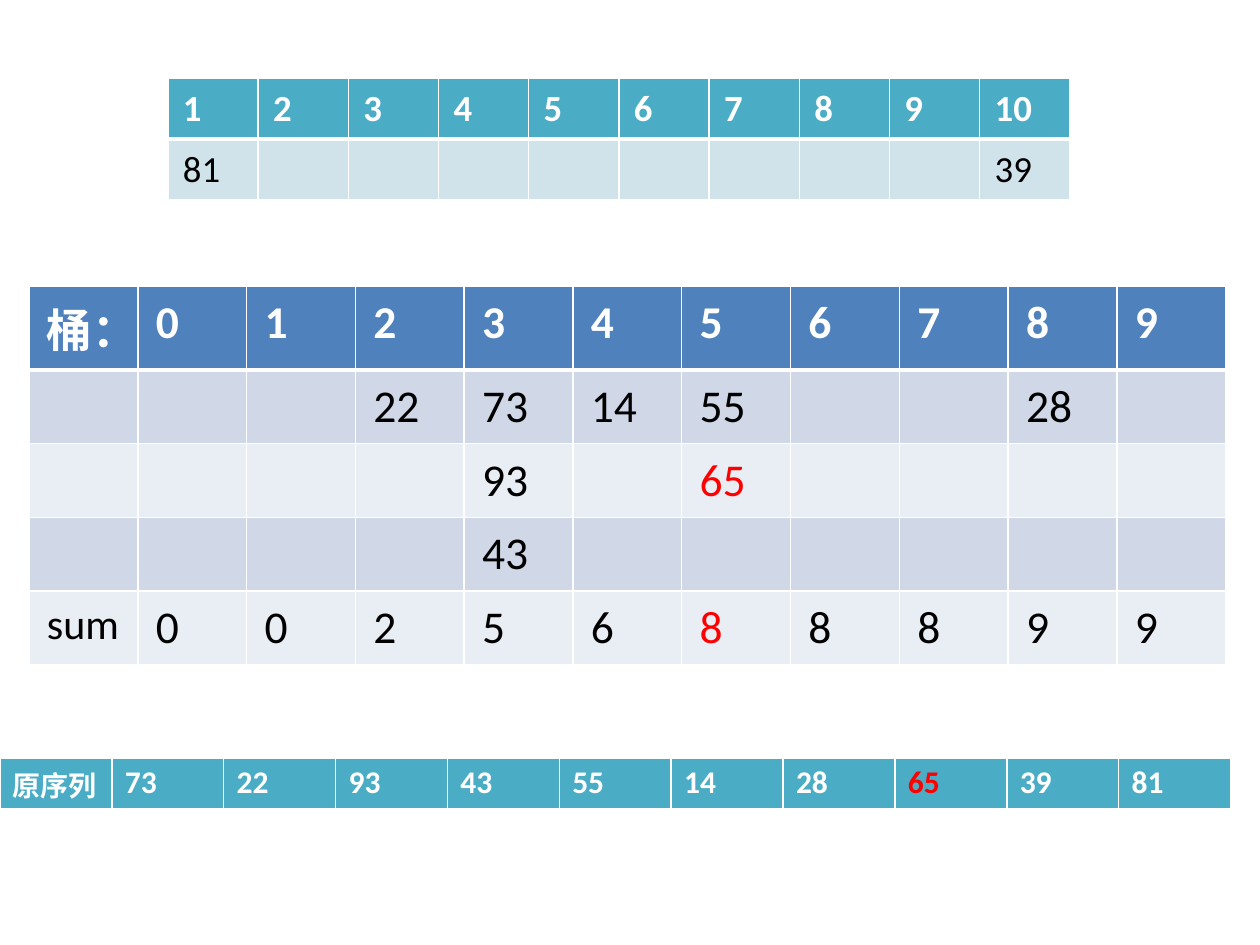
from lxml import etree
from pptx import Presentation
from pptx.dml.color import RGBColor
from pptx.oxml.ns import qn
from pptx.util import Emu, Pt

PX = 914400 / 126
BLANK_LAYOUT = 6
WHITE, BLACK, RED = "FFFFFF", "000000", "FF0000"
BLUE, TEAL = "4F81BD", "4BACC6"
BLUE_BANDS, TEAL_BANDS = ("D0D8E8", "E9EDF4"), ("D0E3EA",)


def px(length):
    return Emu(round(length * PX))


def color(value):
    return RGBColor.from_string(value)


class SlideBuilder:
    """Holds the shared style and the current slide."""

    font_name = "Calibri"
    border_color = WHITE

    def __init__(self, slide):
        self.slide = slide

    def table(self, box, rows, size, header_fill, bands=(), margins=(13, 6),
              red_cells=(), label_sizes=None):
        """Add an even grid: a bold header row, then banded body rows."""
        label_sizes = label_sizes or {}
        left, top, width, height = map(px, box)
        shape = self.slide.shapes.add_table(
            len(rows), len(rows[0]), left, top, width, height)
        table = shape.table
        for column in table.columns:
            column.width = Emu(width // len(rows[0]))
        for row in table.rows:
            row.height = Emu(height // len(rows))

        for i, values in enumerate(rows):
            header = i == 0
            fill = header_fill if header else bands[(i - 1) % len(bands)]
            for j, value in enumerate(values):
                cell = table.cell(i, j)
                text_color = WHITE if header else BLACK
                if (i, j) in red_cells:
                    text_color = RED
                self.cell(cell, fill, margins)
                self.borders(cell, top=3 if i == 1 else 1,
                             bottom=3 if header else 1)
                if value:
                    self.text(cell, value, size=Pt(label_sizes.get((i, j), size)),
                              bold=header, text_color=text_color)

    def cell(self, cell, fill, margins):
        horizontal, vertical = map(px, margins)
        settings = {"margin_left": horizontal, "margin_right": horizontal,
                    "margin_top": vertical, "margin_bottom": vertical}
        for name, value in settings.items():
            setattr(cell, name, value)
        cell.fill.solid()
        cell.fill.fore_color.rgb = color(fill)

    def text(self, cell, value, text_color, **settings):
        run = cell.text_frame.paragraphs[0].add_run()
        run.text = value
        for name, setting in {"name": self.font_name, **settings}.items():
            setattr(run.font, name, setting)
        run.font.color.rgb = color(text_color)

    def borders(self, cell, top, bottom):
        """Border lines come before the fill in the cell properties."""
        properties = cell._tc.get_or_add_tcPr()
        widths = {"a:lnL": 1, "a:lnR": 1, "a:lnT": top, "a:lnB": bottom}
        for position, (tag, width) in enumerate(widths.items()):
            line = etree.Element(qn(tag), w=str(Pt(width)))
            fill = etree.SubElement(line, qn("a:solidFill"))
            etree.SubElement(fill, qn("a:srgbClr"), val=self.border_color)
            properties.insert(position, line)


def main():
    presentation = Presentation()
    presentation.slide_width, presentation.slide_height = px(1260), px(945)
    layout = presentation.slide_layouts[BLANK_LAYOUT]
    builder = SlideBuilder(presentation.slides.add_slide(layout))

    # Buckets by last digit, with running totals
    buckets = [
        ["桶：", "0", "1", "2", "3", "4", "5", "6", "7", "8", "9"],
        ["", "", "", "22", "73", "14", "55", "", "", "28", ""],
        ["", "", "", "", "93", "", "65", "", "", "", ""],
        ["", "", "", "", "43", "", "", "", "", "", ""],
        ["sum", "0", "0", "2", "5", "6", "8", "8", "8", "9", "9"],
    ]
    builder.table((29, 286, 1197, 364), buckets, 26, BLUE, BLUE_BANDS,
                  margins=(18, 9), red_cells={(2, 6), (4, 6)},
                  label_sizes={(4, 0): 24})

    # Result positions filled so far
    positions = [[str(number) for number in range(1, 11)],
                 ["81"] + [""] * 8 + ["39"]]
    builder.table((168, 78, 902, 122), positions, 21, TEAL, TEAL_BANDS,
                  margins=(15, 8))

    # Source sequence
    sequence = [["原序列", "73", "22", "93", "43", "55", "14", "28", "65", "39", "81"]]
    builder.table((0, 758, 1231, 52), sequence, 18, TEAL,
                  red_cells={(0, 8)}, label_sizes={(0, 0): 16})

    presentation.save("out.pptx")


if __name__ == "__main__":
    main()
